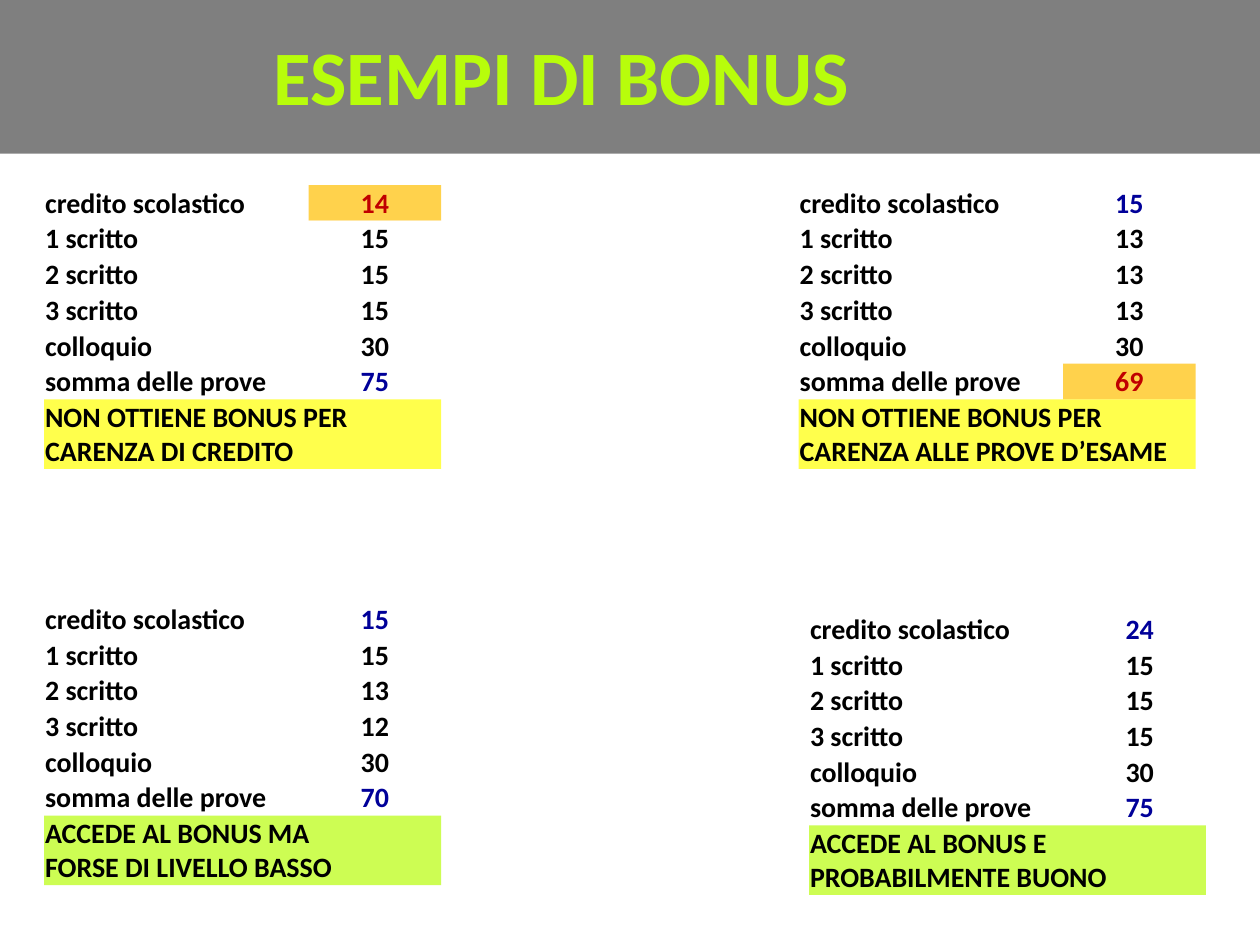
"""Build the slide that compares four examples of exam bonus."""
from dataclasses import dataclass

from lxml import etree
from pptx import Presentation
from pptx.dml.color import RGBColor
from pptx.enum import text as t
from pptx.oxml import ns
from pptx.util import Cm, Pt

TITLE = "ESEMPI DI BONUS"
LABELS = ["credito scolastico", "1 scritto", "2 scritto", "3 scritto",
          "colloquio", "somma delle prove"]
CREDIT, TOTAL = 0, 5
EXAMPLES = [
    {"at": (0.89, 3.73), "scores": [14, 15, 15, 15, 30, 75], "failed": CREDIT,
     "outcome": "NON OTTIENE BONUS PER CARENZA DI CREDITO"},
    {"at": (16.1, 3.73), "scores": [15, 13, 13, 13, 30, 69], "failed": TOTAL,
     "outcome": "NON OTTIENE BONUS PER CARENZA ALLE PROVE D’ESAME"},
    {"at": (0.89, 12.12), "scores": [15, 15, 13, 12, 30, 70], "failed": None,
     "outcome": "ACCEDE AL BONUS MA\vFORSE DI LIVELLO BASSO"},
    {"at": (16.31, 12.32), "scores": [24, 15, 15, 15, 30, 75], "failed": None,
     "outcome": "ACCEDE AL BONUS E PROBABILMENTE BUONO"},
]
COLUMNS = (5.33, 2.67)
SCORE_ROW, OUTCOME_ROW = 0.72, 1.4
PLAIN_TABLE = "{2D5ABB26-0587-4C30-8999-92F81FD0307C}"


@dataclass(frozen=True)
class Theme:
    font: str = "Calibri"
    title_size: int = 44
    table_size: int = 16
    ink: str = "000000"
    paper: str = "FFFFFF"
    lime: str = "B8FD0B"
    outline: str = "5E457C"
    key_score: str = "000099"
    failed_score: str = "C00000"
    failed_fill: str = "FFC000"
    denied_fill: str = "FFFF00"
    band_opacity: int = 50
    cell_opacity: int = 70


THEME = Theme()


def fill_clear(fill, properties, color, opacity):
    """Set a partly transparent solid fill held by the given properties."""
    fill.solid()
    fill.fore_color.rgb = RGBColor.from_string(color)
    srgb = properties.find(ns.qn("a:solidFill")).find(ns.qn("a:srgbClr"))
    etree.SubElement(srgb, ns.qn("a:alpha"), val=str(opacity * 1000))


def style_font(font, size, color):
    """Apply the bold theme face in a size and colour."""
    font.name, font.size, font.bold = THEME.font, Pt(size), True
    font.color.rgb = RGBColor.from_string(color)


def add_title(slide):
    """Place the heading band and its outlined text."""
    heading = slide.shapes.title
    heading.left, heading.top, heading.width, heading.height = Cm(0), Cm(-0.08), Cm(25.4), Cm(3.18)
    fill_clear(heading.fill, heading._element.spPr, THEME.ink, THEME.band_opacity)
    frame = heading.text_frame
    frame.text = TITLE
    frame.auto_size = t.MSO_AUTO_SIZE.NONE
    frame.word_wrap = True
    frame.vertical_anchor = t.MSO_ANCHOR.MIDDLE
    frame.margin_left, frame.margin_right = Cm(0.25), Cm(3)
    frame.margin_top = frame.margin_bottom = Cm(0.13)
    line = frame.paragraphs[0]
    line.alignment = t.PP_ALIGN.CENTER
    style_font(line.font, THEME.title_size, THEME.lime)
    outline = etree.Element(ns.qn("a:ln"), w=str(int(Pt(0.71))))
    solid = etree.SubElement(outline, ns.qn("a:solidFill"))
    etree.SubElement(solid, ns.qn("a:srgbClr"), val=THEME.outline)
    line.runs[0]._r.get_or_add_rPr().insert(0, outline)


def write_cell(cell, content, fill, color=THEME.ink, align=t.PP_ALIGN.LEFT):
    """Write one table cell."""
    cell.margin_left = cell.margin_right = cell.margin_top = Cm(0.02)
    cell.margin_bottom = Cm(0)
    cell.vertical_anchor = t.MSO_ANCHOR.BOTTOM
    fill_clear(cell.fill, cell._tc.get_or_add_tcPr(), fill, THEME.cell_opacity)
    cell.text_frame.text = str(content)
    line = cell.text_frame.paragraphs[0]
    line.alignment = align
    style_font(line.font, THEME.table_size, color)


def add_example(slide, example):
    """Add the score table of one student with its outcome."""
    left, top = example["at"]
    heights = [SCORE_ROW] * len(LABELS) + [OUTCOME_ROW]
    frame = slide.shapes.add_table(len(heights), len(COLUMNS), Cm(left), Cm(top),
                                   Cm(sum(COLUMNS)), Cm(sum(heights)))
    table = frame.table
    table.first_row = table.horz_banding = False
    table._tbl.tblPr.find(ns.qn("a:tableStyleId")).text = PLAIN_TABLE
    for column, width in zip(table.columns, COLUMNS):
        column.width = Cm(width)
    for row, height in zip(table.rows, heights):
        row.height = Cm(height)

    failed = example["failed"]
    for index, (label, score) in enumerate(zip(LABELS, example["scores"])):
        fill, color = THEME.paper, THEME.ink
        if index == failed:
            fill, color = THEME.failed_fill, THEME.failed_score
        elif index in (CREDIT, TOTAL):
            color = THEME.key_score
        write_cell(table.cell(index, 0), label, THEME.paper)
        write_cell(table.cell(index, 1), score, fill, color, t.PP_ALIGN.CENTER)

    outcome = table.cell(len(LABELS), 0)
    outcome.merge(table.cell(len(LABELS), 1))
    write_cell(outcome, example["outcome"], THEME.lime if failed is None else THEME.denied_fill)


def main():
    """Build and save the slide."""
    deck = Presentation()
    deck.slide_width, deck.slide_height = Cm(25.4), Cm(19.05)
    slide = deck.slides.add_slide(deck.slide_layouts.get_by_name("Title Only"))
    add_title(slide)
    for example in EXAMPLES:
        add_example(slide, example)
    deck.save("out.pptx")


if __name__ == "__main__":
    main()
